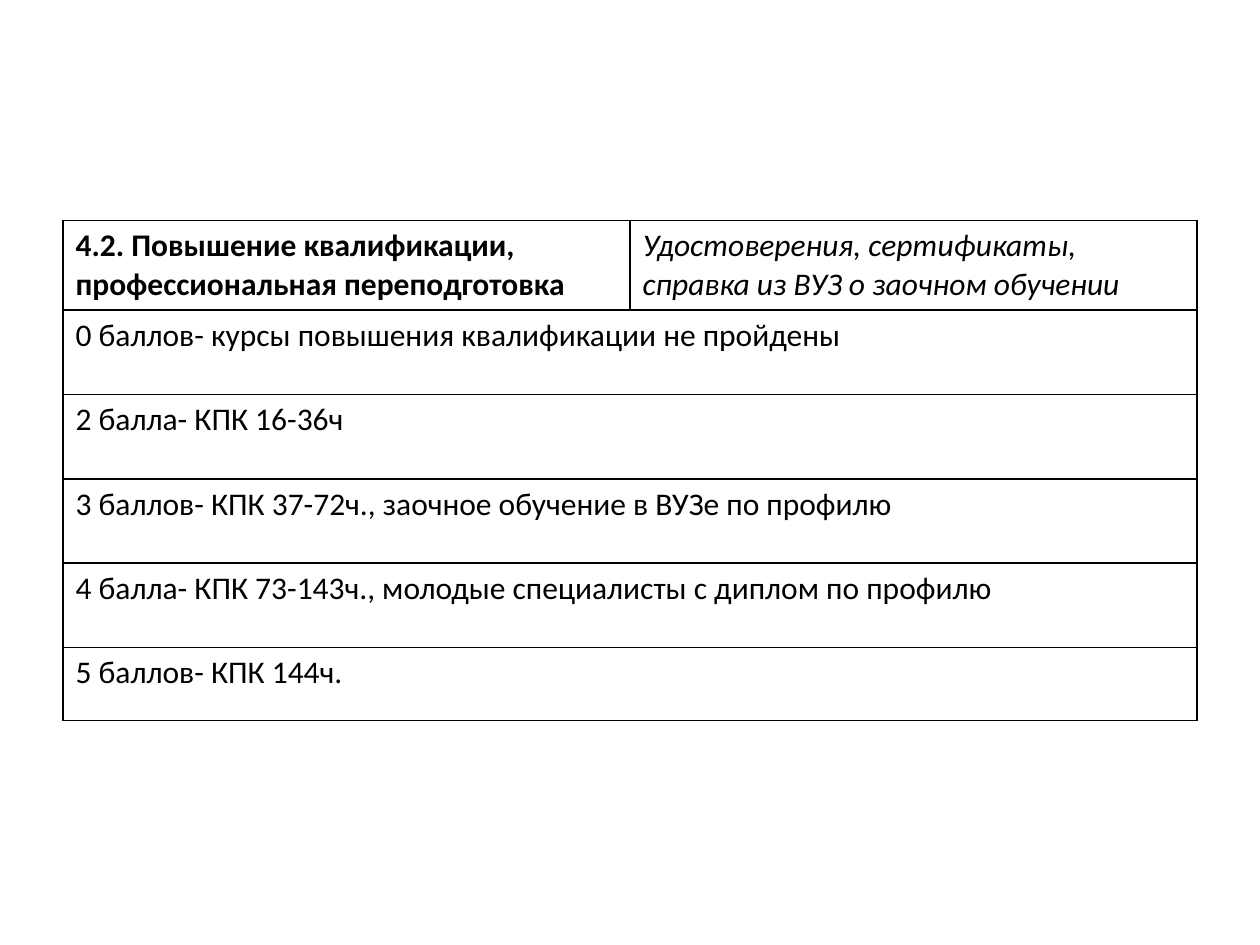
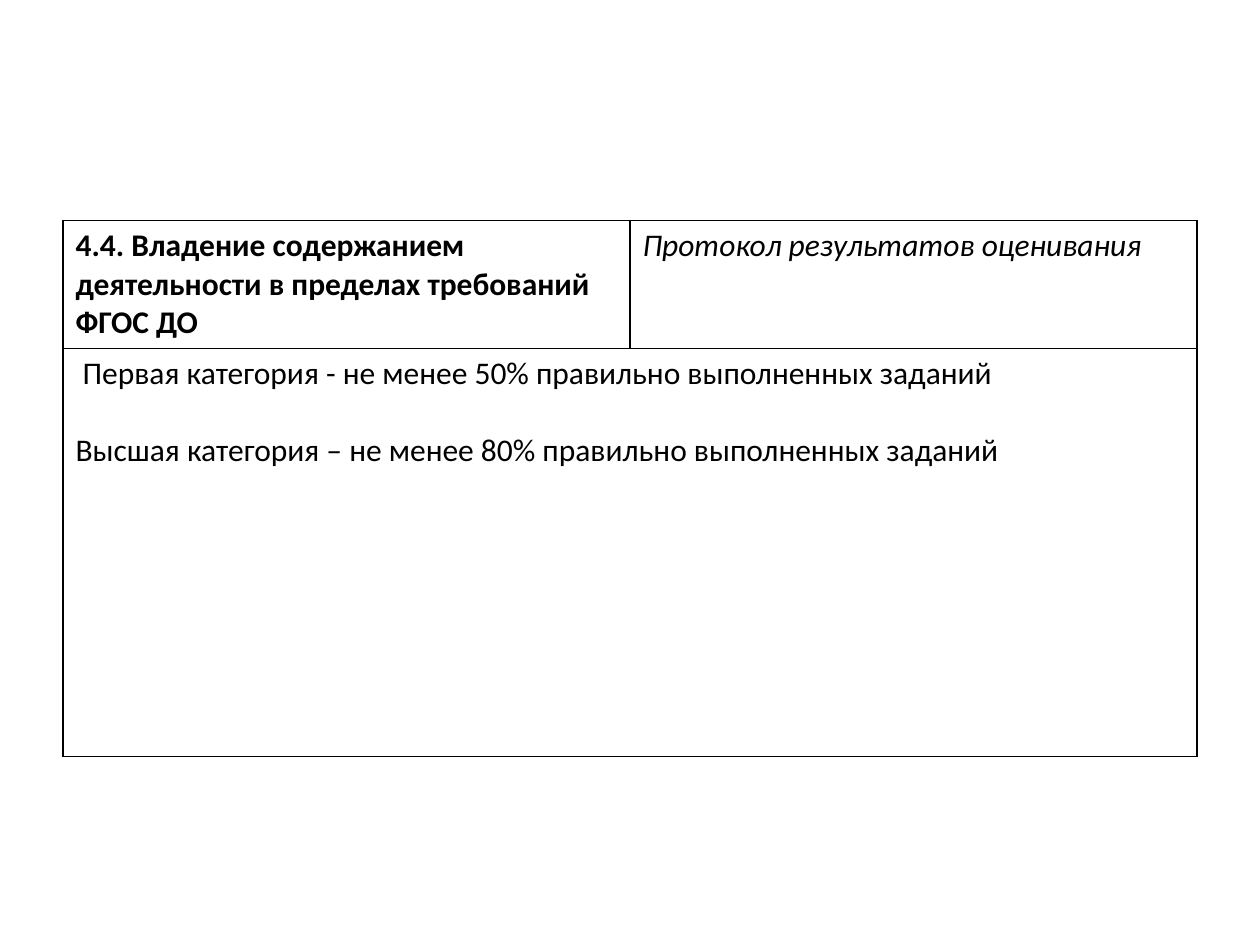
from lxml import etree
from pptx import Presentation
from pptx import util as u
from pptx.dml.color import RGBColor
from pptx.oxml import ns

BLACK = RGBColor(0, 0, 0)
FONT, TEXT_SIZE = "Calibri", u.Pt(18)
BORDER_WIDTH = u.Pt(1)
BLANK_LAYOUT = 6
SLIDE_WIDTH, SLIDE_HEIGHT = u.Inches(10), u.Inches(7.5)
TABLE_LEFT, TABLE_TOP = u.Inches(0.5), u.Inches(1.75)
TABLE_WIDTH = SLIDE_WIDTH - 2 * TABLE_LEFT
HEADER_HEIGHT = 0.67
PARAGRAPH_GAP = u.Pt(22)

# Each criterion: title, evidence, then full-width rows of (height in inches, paragraphs)
CRITERIA = [
    {
        "title": "4.2. Повышение квалификации, профессиональная переподготовка",
        "evidence": "Удостоверения, сертификаты, справка из ВУЗ о заочном обучении",
        "rows": [
            (0.67, ["0 баллов- курсы повышения квалификации не пройдены"]),
            (0.67, ["2 балла- КПК 16-36ч"]),
            (0.67, ["3 баллов- КПК 37-72ч., заочное обучение в ВУЗе по профилю"]),
            (0.67, ["4 балла- КПК 73-143ч., молодые специалисты с диплом по профилю"]),
            (0.58, ["5 баллов- КПК 144ч."]),
        ],
    },
    {
        "title": "4.4. Владение содержанием деятельности в пределах требований ФГОС ДО",
        "evidence": "Протокол результатов оценивания",
        "rows": [
            (3.24, [" Первая категория - не менее 50% правильно выполненных заданий",
                    "Высшая категория – не менее 80% правильно выполненных заданий"]),
        ],
    },
]


def outline(cell):
    """Draw a black line on all four sides of a cell and leave it unfilled."""
    properties = cell._tc.get_or_add_tcPr()
    for side in ("lnL", "lnR", "lnT", "lnB"):
        line = etree.SubElement(properties, ns.qn(f"a:{side}"), w=str(BORDER_WIDTH))
        fill = etree.SubElement(line, ns.qn("a:solidFill"))
        etree.SubElement(fill, ns.qn("a:srgbClr"), val=str(BLACK))
    cell.fill.background()


def write(cell, paragraphs, bold=False, italic=False):
    cell.text_frame.text = "\n".join(paragraphs)
    for para in cell.text_frame.paragraphs:
        for span in para.runs:
            font = span.font
            font.name, font.size = FONT, TEXT_SIZE
            font.bold, font.italic = bold, italic
            font.color.rgb = BLACK
    for para in cell.text_frame.paragraphs[:-1]:
        para.space_after = PARAGRAPH_GAP


def add_criterion(deck, criterion):
    page = deck.slides.add_slide(deck.slide_layouts[BLANK_LAYOUT])
    heights = [HEADER_HEIGHT] + [height for height, _ in criterion["rows"]]
    table = page.shapes.add_table(len(heights), 2, TABLE_LEFT, TABLE_TOP,
                                  TABLE_WIDTH, u.Inches(sum(heights))).table
    table.first_row = table.horz_banding = False
    for row, height in zip(table.rows, heights):
        row.height = u.Inches(height)
    for cell in table.iter_cells():
        outline(cell)

    write(table.cell(0, 0), [criterion["title"]], bold=True)
    write(table.cell(0, 1), [criterion["evidence"]], italic=True)
    for number, (_, paragraphs) in enumerate(criterion["rows"], start=1):
        table.cell(number, 0).merge(table.cell(number, 1))
        write(table.cell(number, 0), paragraphs)


def main():
    deck = Presentation()
    deck.slide_width, deck.slide_height = SLIDE_WIDTH, SLIDE_HEIGHT
    for criterion in CRITERIA:
        add_criterion(deck, criterion)
    deck.save("out.pptx")


if __name__ == "__main__":
    main()
